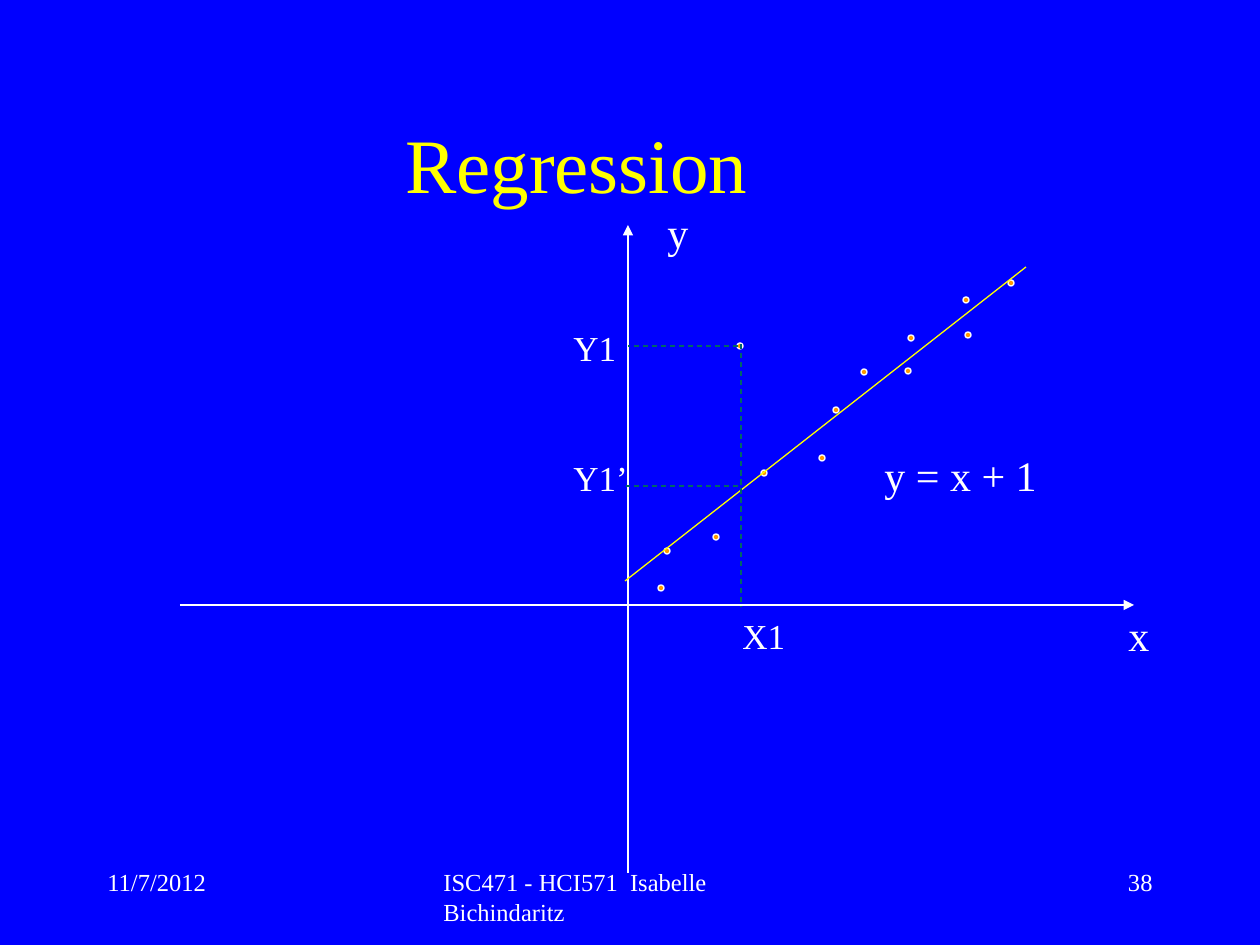
from typing import NamedTuple

from lxml.etree import SubElement
from pptx import Presentation
from pptx.dml.color import RGBColor
from pptx.enum.dml import MSO_LINE_DASH_STYLE as Dash
from pptx.enum.shapes import MSO_CONNECTOR as Connector, MSO_SHAPE as Shape
from pptx.enum.text import MSO_ANCHOR as Anchor, MSO_AUTO_SIZE as AutoSize, PP_ALIGN as Align
from pptx.oxml.ns import qn
from pptx.slide import Slide
from pptx.util import Emu, Pt

PX_PER_INCH = 126
FONT = "Times New Roman"
BLUE, WHITE, YELLOW, ORANGE, TEAL = "0000FF", "FFFFFF", "FFFF00", "FF9900", "006666"
LINE_WIDTH = Pt(0.75)
DOT_SIZE = 6


class Label(NamedTuple):
    text: str
    left: int
    top: int
    width: int
    height: int
    size: int
    color: str = WHITE
    align: Align = Align.LEFT
    anchor: Anchor = Anchor.TOP
    wrap: bool = False


class Segment(NamedTuple):
    start: tuple[int, int]
    end: tuple[int, int]
    color: str
    arrow: bool = False
    dashed: bool = False


class Dot(NamedTuple):
    x: int
    y: int


FRAME_LABELS = [
    Label("11/7/2012", 95, 861, 262, 63, 14, wrap=True),
    Label("ISC471 - HCI571  Isabelle Bichindaritz", 431, 861, 399, 63, 14, wrap=True),
    Label("38", 903, 861, 262, 63, 14, align=Align.RIGHT, wrap=True),
    Label("Regression", 137, 84, 879, 158, 44, YELLOW, Align.CENTER, Anchor.MIDDLE, True),
]
AXES = [
    Segment((180, 605), (1134, 605), WHITE, arrow=True),
    Segment((628, 873), (628, 225), WHITE, arrow=True),
]
DOTS = [
    Dot(822, 458), Dot(764, 473), Dot(740, 346), Dot(716, 537), Dot(836, 410),
    Dot(864, 372), Dot(667, 551), Dot(908, 371), Dot(911, 338), Dot(968, 335),
    Dot(661, 588), Dot(966, 300), Dot(1011, 283),
]
REGRESSION_LINE = Segment((625, 581), (1026, 267), YELLOW)
AXIS_LABELS = [
    Label("x", 1116, 603, 48, 63, 24),
    Label("y", 655, 200, 48, 63, 24),
    Label("y = x + 1", 872, 443, 178, 63, 24),
]
GUIDES = [
    Segment((741, 344), (741, 607), TEAL, dashed=True),
    Segment((738, 346), (628, 346), TEAL, dashed=True),
    Segment((738, 486), (626, 486), TEAL, dashed=True),
]
GUIDE_LABELS = [
    Label("X1", 730, 608, 69, 54, 20),
    Label("Y1", 561, 320, 69, 54, 20),
    Label("Y1’", 561, 450, 82, 54, 20),
]


def px(length: int) -> Emu:
    return Emu(round(length * 914400 / PX_PER_INCH))


def rgb(color: str) -> RGBColor:
    return RGBColor.from_string(color)


def set_format(target: object, values: dict[str, object]) -> None:
    for name, value in values.items():
        setattr(target, name, value)


def draw_label(slide: Slide, label: Label) -> None:
    box = slide.shapes.add_textbox(*map(px, (label.left, label.top, label.width, label.height)))
    frame = box.text_frame
    set_format(frame, {
        "word_wrap": label.wrap,
        "auto_size": AutoSize.NONE if label.wrap else AutoSize.SHAPE_TO_FIT_TEXT,
        "vertical_anchor": label.anchor,
    })
    paragraph = frame.paragraphs[0]
    paragraph.alignment = label.align
    run = paragraph.add_run()
    run.text = label.text
    set_format(run.font, {"name": FONT, "size": Pt(label.size)})
    run.font.color.rgb = rgb(label.color)


def draw_segment(slide: Slide, segment: Segment) -> None:
    connector = slide.shapes.add_connector(
        Connector.STRAIGHT, *map(px, segment.start + segment.end))
    line = connector.line
    line.color.rgb = rgb(segment.color)
    line.width = LINE_WIDTH
    if segment.dashed:
        line.dash_style = Dash.DASH
    properties = connector.element.spPr
    if segment.arrow:
        SubElement(properties.find(qn("a:ln")), qn("a:tailEnd"), type="triangle")
    SubElement(properties, qn("a:effectLst"))


def draw_dot(slide: Slide, dot: Dot) -> None:
    radius = DOT_SIZE // 2
    shape = slide.shapes.add_shape(
        Shape.OVAL, *map(px, (dot.x - radius, dot.y - radius, DOT_SIZE, DOT_SIZE)))
    shape.shadow.inherit = False
    shape.fill.solid()
    shape.fill.fore_color.rgb = rgb(ORANGE)
    shape.line.color.rgb = rgb(WHITE)
    shape.line.width = LINE_WIDTH


def main() -> None:
    presentation = Presentation()
    set_format(presentation, {"slide_width": px(1260), "slide_height": px(945)})
    slide = presentation.slides.add_slide(presentation.slide_layouts[6])
    background = slide.background.fill
    background.solid()
    background.fore_color.rgb = rgb(BLUE)

    for label in FRAME_LABELS:
        draw_label(slide, label)
    for axis in AXES:
        draw_segment(slide, axis)
    for dot in DOTS:
        draw_dot(slide, dot)
    draw_segment(slide, REGRESSION_LINE)
    for label in AXIS_LABELS:
        draw_label(slide, label)
    for guide in GUIDES:
        draw_segment(slide, guide)
    for label in GUIDE_LABELS:
        draw_label(slide, label)

    presentation.save("out.pptx")


if __name__ == "__main__":
    main()
